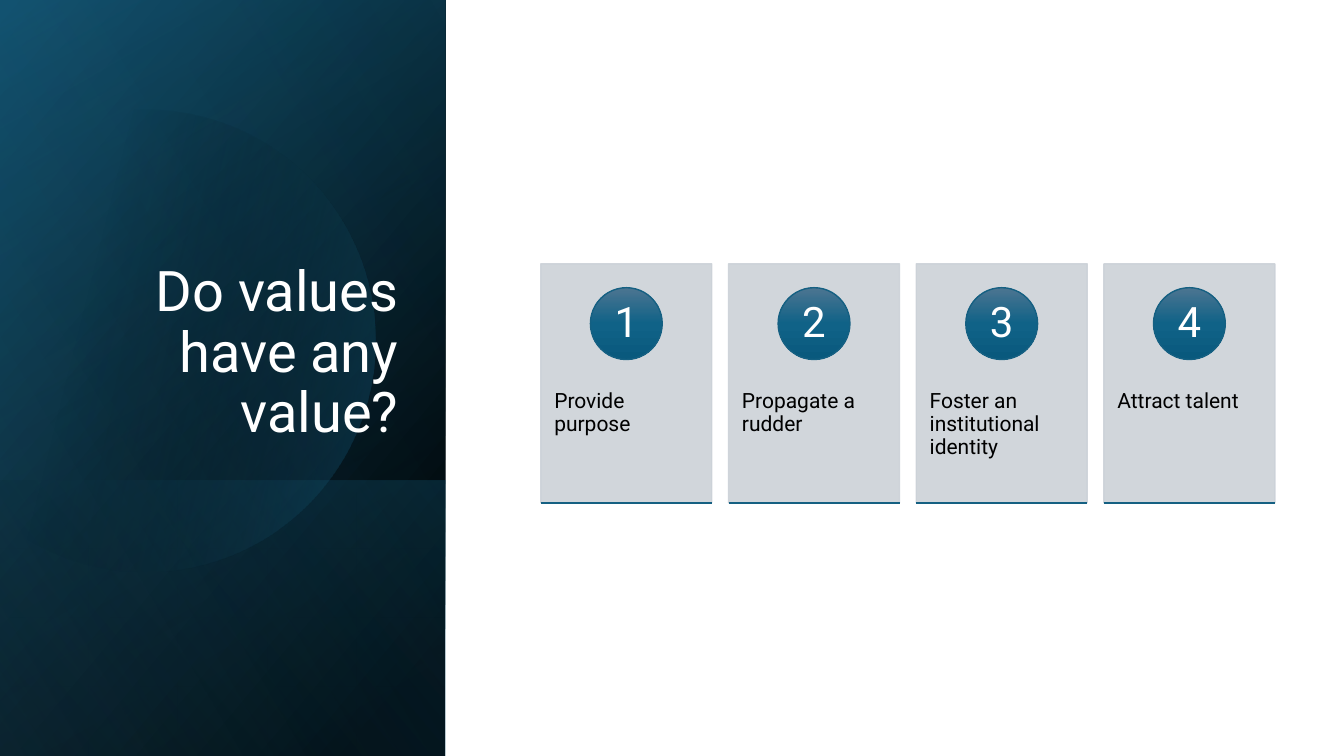
from dataclasses import dataclass
from math import cos, radians, sin

from lxml.etree import Element, SubElement
from pptx import Presentation
from pptx.dml.color import RGBColor
from pptx.enum.shapes import MSO_CONNECTOR as CONNECTOR, MSO_SHAPE as SHAPE
from pptx.enum.text import MSO_ANCHOR as ANCHOR, PP_ALIGN as ALIGN
from pptx.oxml.ns import qn
from pptx.util import Cm, Pt


@dataclass(frozen=True)
class Theme:
    font: str = "Roboto"
    black: str = "000000"
    white: str = "FFFFFF"
    accent: str = "156082"
    deep: str = "104862"
    sky: str = "46B1E1"
    card: str = "CCD2D8"
    badge: tuple = ((0, "4C7591", 100), (50, "106287", 100), (100, "09597D", 100))
    title_size: int = 40
    number_size: int = 30
    label_size: int = 15
    line_width: int = 1
    card_alpha: int = 90


def set_alpha(color, percent):
    SubElement(color, qn("a:alpha"), val=str(percent * 1000))


def set_gradient(sp, stops, angle):
    """Fill with (position, colour, opacity) stops, both in percent."""
    sp.fill.gradient()
    grad = sp.element.spPr.find(qn("a:gradFill"))
    grad.clear()
    grad.set("rotWithShape", "1")
    stop_list = SubElement(grad, qn("a:gsLst"))
    for position, color, opacity in stops:
        gs = SubElement(stop_list, qn("a:gs"), pos=str(position * 1000))
        set_alpha(SubElement(gs, qn("a:srgbClr"), val=color), opacity)
    SubElement(grad, qn("a:lin"), ang=str(angle * 60000), scaled="0")


def write_text(sp, text, size, color, align=ALIGN.LEFT, anchor=ANCHOR.TOP,
               margins=(0.25, 0.13)):
    tf = sp.text_frame
    tf.word_wrap = True
    tf.vertical_anchor = anchor
    tf.margin_left = tf.margin_right = Cm(margins[0])
    tf.margin_top = tf.margin_bottom = Cm(margins[1])
    p = tf.paragraphs[0]
    p.alignment = align
    p.line_spacing = 0.9
    r = p.add_run()
    r.text = text
    r.font.name = theme.font
    r.font.size = Pt(size)
    r.font.color.rgb = RGBColor.from_string(color)


class SlideBuilder:
    def __init__(self, slide, style):
        self.shapes = slide.shapes
        self.style = style

    def shape(self, kind, left, top, width, height):
        sp = self.shapes.add_shape(kind, Cm(left), Cm(top), Cm(width), Cm(height))
        sp.shadow.inherit = False
        return sp

    def outline(self, sp, color):
        sp.line.color.rgb = RGBColor.from_string(color)
        sp.line.width = Pt(self.style.line_width)

    def panel(self, top, width, height, stops, angle):
        """Gradient band at the left edge, mirrored and turned a quarter."""
        sp = self.shape(SHAPE.RECTANGLE, (width - height) / 2,
                        top + (height - width) / 2, height, width)
        sp.rotation = 90
        sp.element.spPr.xfrm.set("flipH", "1")
        sp.line.fill.background()
        set_gradient(sp, stops, angle)

    def disc(self, x, y, radius, half_sweep, stops, angle):
        """Circle cut by a vertical chord on its left side."""
        angles = [-half_sweep, -90, 0, 90, half_sweep]
        points = [(Cm(x + radius * cos(radians(a))), Cm(y + radius * sin(radians(a))))
                  for a in angles]
        builder = self.shapes.build_freeform(*points[0])
        builder.add_line_segments(points[1:], close=True)
        sp = builder.convert_to_shape()
        sides = list(sp.element.spPr.iter(qn("a:lnTo")))
        for side, start, end in zip(sides, angles, angles[1:]):
            arc = Element(qn("a:arcTo"), wR=str(Cm(radius)), hR=str(Cm(radius)),
                          stAng=str(start % 360 * 60000),
                          swAng=str((end - start) * 60000))
            side.getparent().replace(side, arc)
        sp.shadow.inherit = False
        sp.line.fill.background()
        set_gradient(sp, stops, angle)

    def text(self, text, left, top, width, height, **text_format):
        sp = self.shape(SHAPE.RECTANGLE, left, top, width, height)
        sp.fill.background()
        sp.line.fill.background()
        write_text(sp, text, **text_format)

    def rule(self, left, y, width):
        line = self.shapes.add_connector(CONNECTOR.STRAIGHT, Cm(left), Cm(y),
                                         Cm(left + width), Cm(y))
        self.outline(line, self.style.accent)
        SubElement(line.element.spPr, qn("a:effectLst"))

    def card(self, number, label, left, top, width, height):
        style = self.style
        card = self.shape(SHAPE.RECTANGLE, left, top, width, height)
        card.fill.solid()
        card.fill.fore_color.rgb = RGBColor.from_string(style.card)
        self.outline(card, style.card)
        for color in card.element.spPr.iter(qn("a:srgbClr")):
            set_alpha(color, style.card_alpha)

        self.text(label, left, top + 2.29, width, 3.61, size=style.label_size,
                  color=style.black, margins=(0.34, 0.91))

        diameter = 1.81
        badge = self.shape(SHAPE.OVAL, left + (width - diameter) / 2, top + 0.6,
                           diameter, diameter)
        set_gradient(badge, style.badge, 90)
        self.outline(badge, style.accent)
        write_text(badge, str(number), size=style.number_size, color=style.white,
                   align=ALIGN.CENTER, anchor=ANCHOR.MIDDLE, margins=(0.15, 0.03))
        self.rule(left, top + height, width)


theme = Theme()


def main():
    slide_height, panel_width = 19.05, 11.22
    prs = Presentation()
    prs.slide_width, prs.slide_height = Cm(33.87), Cm(slide_height)
    s = SlideBuilder(prs.slides.add_slide(prs.slide_layouts[6]), theme)

    black, accent = theme.black, theme.accent
    full = (0, panel_width, slide_height)
    s.panel(*full, [(8, black, 100), (100, theme.deep, 100)], 50)
    s.panel(*full, [(0, black, 0), (99, accent, 46)], 30)
    s.panel(12.1, panel_width, slide_height - 12.1,
            [(2, accent, 29), (100, black, 30)], 130)
    s.disc(3.66, 8.58, 5.81, 134, [(29, black, 0), (100, accent, 43)], 14)
    s.panel(*full, [(0, black, 0), (99, theme.sky, 11)], 120)

    s.text("Do values have any value?", 1.63, 4.69, 8.66, 6.65,
           size=theme.title_size, color=theme.white, align=ALIGN.RIGHT,
           anchor=ANCHOR.BOTTOM)

    labels = ["Provide purpose", "Propagate a rudder",
              "Foster an institutional identity", "Attract talent"]
    for i, label in enumerate(labels):
        s.card(i + 1, label, 13.63 + i * 4.73, 6.65, 4.31, 6.02)

    prs.save("out.pptx")


if __name__ == "__main__":
    main()
